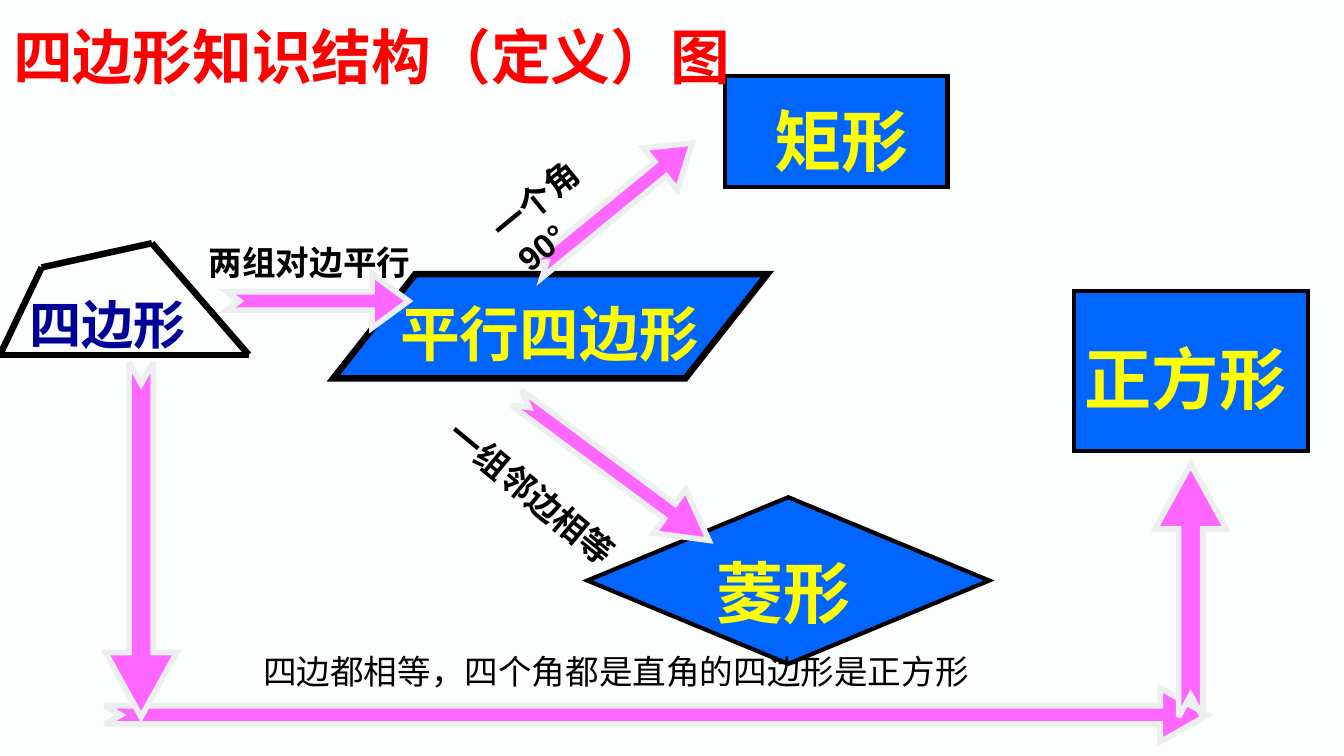
from itertools import pairwise
from lxml.etree import SubElement
from pptx import Presentation
from pptx.dml.color import RGBColor
from pptx.enum.shapes import MSO_CONNECTOR, MSO_SHAPE
from pptx.enum.text import MSO_AUTO_SIZE, PP_ALIGN
from pptx.oxml.ns import qn
from pptx.util import Emu, Pt

SCALE = 4572
SANS = "Noto Sans CJK SC"


def px(n):
    """Turn px into EMU."""
    return Emu(n * SCALE)


def color(code):
    """Turn a hex string into a colour."""
    return RGBColor.from_string(code)


class Board:
    """Style and current slide of the diagram."""

    blue, pink, yellow = "0066FF", "FF66FF", "FFFF00"
    black, red, navy, pale = "000000", "FF0000", "000099", "ECEEEF"

    def __init__(self, deck):
        """Add a blank slide with the pale background."""
        self.slide = deck.slides.add_slide(deck.slide_layouts[6])
        self.shapes = self.slide.shapes
        fill = self.slide.background.fill
        fill.solid()
        fill.fore_color.rgb = color("FCFDFD")

    def line(self, start, end):
        """Draw one thick black side."""
        side = self.shapes.add_connector(
            MSO_CONNECTOR.STRAIGHT, *map(px, start + end))
        side.line.color.rgb = color(self.black)
        side.line.width = Pt(3.5)
        SubElement(side._element.spPr, qn("a:effectLst"))

    def shape(self, kind, box, fill, edge, width, turn=0, adjust=()):
        """Draw a filled preset shape with sharp corners."""
        item = self.shapes.add_shape(kind, *map(px, box))
        item.shadow.inherit = False
        item.fill.solid()
        item.fill.fore_color.rgb = color(fill)
        item.line.color.rgb = color(edge)
        item.line.width = Pt(width)
        outline = item._element.spPr.find(qn("a:ln"))
        SubElement(outline, qn("a:miter"), lim="800000")
        item.rotation = turn
        for i, value in enumerate(adjust):
            item.adjustments[i] = value

    def figure(self, kind, box, width=2.25, adjust=()):
        """Draw a blue figure with a black edge."""
        self.shape(kind, box, self.blue, self.black, width, adjust=adjust)

    def arrow(self, box, head, turn=0):
        """Draw a pink notched arrow."""
        self.shape(MSO_SHAPE.NOTCHED_RIGHT_ARROW, box, self.pink,
                   self.pale, 3, turn, (0.34, head))

    def text(self, words, box, size=18, tone=black, font="Arial",
             bold=True, turn=0, wrap=False, align=PP_ALIGN.LEFT, inset=20):
        """Write a text box."""
        item = self.shapes.add_textbox(*map(px, box))
        item.rotation = turn
        frame = item.text_frame
        frame.text = words
        frame.word_wrap = wrap
        frame.auto_size = MSO_AUTO_SIZE.NONE
        frame.margin_right = px(inset)
        par = frame.paragraphs[0]
        par.alignment = align
        for run in par.runs:
            run.font.size = Pt(size)
            run.font.bold = bold
            run.font.name = font
            run.font.color.rgb = color(tone)
            SubElement(run.font._element, qn("a:ea"), typeface=SANS)

    def name(self, words, box, size=36, font=SANS):
        """Write the yellow name of a figure."""
        self.text(words, box, size, self.yellow, font,
                  wrap=True, align=PP_ALIGN.CENTER)


def main():
    """Build the quadrilateral diagram."""
    deck = Presentation()
    deck.slide_width, deck.slide_height = px(2000), px(1125)
    board = Board(deck)

    left, right = (0, 528), (370, 528)
    points = [right, left, (62, 398), (226, 362), right]
    for start, end in pairwise(points):
        board.line(start, end)
    board.text("四边形", (24, 425, 276, 114), 28, board.navy,
               "Times New Roman")

    board.figure(MSO_SHAPE.PARALLELOGRAM, (496, 408, 646, 155), 3.5, (0.787,))
    board.figure(MSO_SHAPE.RECTANGLE, (1079, 113, 331, 166))
    board.figure(MSO_SHAPE.DIAMOND, (874, 740, 598, 248))
    board.figure(MSO_SHAPE.RECTANGLE, (1598, 433, 348, 238))

    board.name("矩形", (1094, 138, 316, 142))
    board.name("平行四边形", (574, 432, 488, 128), 32, "Arial")
    board.name("菱形", (1032, 811, 268, 142))
    board.name("正方形", (1583, 492, 362, 142))

    board.arrow((338, 408, 270, 80), 0.68)
    board.arrow((733, 658, 357, 80), 0.905, 36.5)
    board.arrow((764, 268, 300, 80), 0.76, 320.7)
    board.arrow((156, 1024, 1641, 80), 0.88)

    board.text("两组对边平行", (291, 350, 344, 80))
    board.text("一个角90°", (693, 233, 268, 80), turn=320.7,
               wrap=True, inset=60)
    board.text("一组邻边相等", (621, 695, 344, 80), turn=39.6)
    board.text("四边形知识结构（定义）图", (0, 20, 1118, 128), 32, board.red)

    board.arrow((-54, 750, 528, 106), 0.905, 90)
    board.arrow((1584, 826, 376, 106), 0.905, 270)
    board.text("四边都相等，四个角都是直角的四边形是正方形",
               (372, 959, 1100, 80), bold=False)
    deck.save("out.pptx")


if __name__ == "__main__":
    main()
